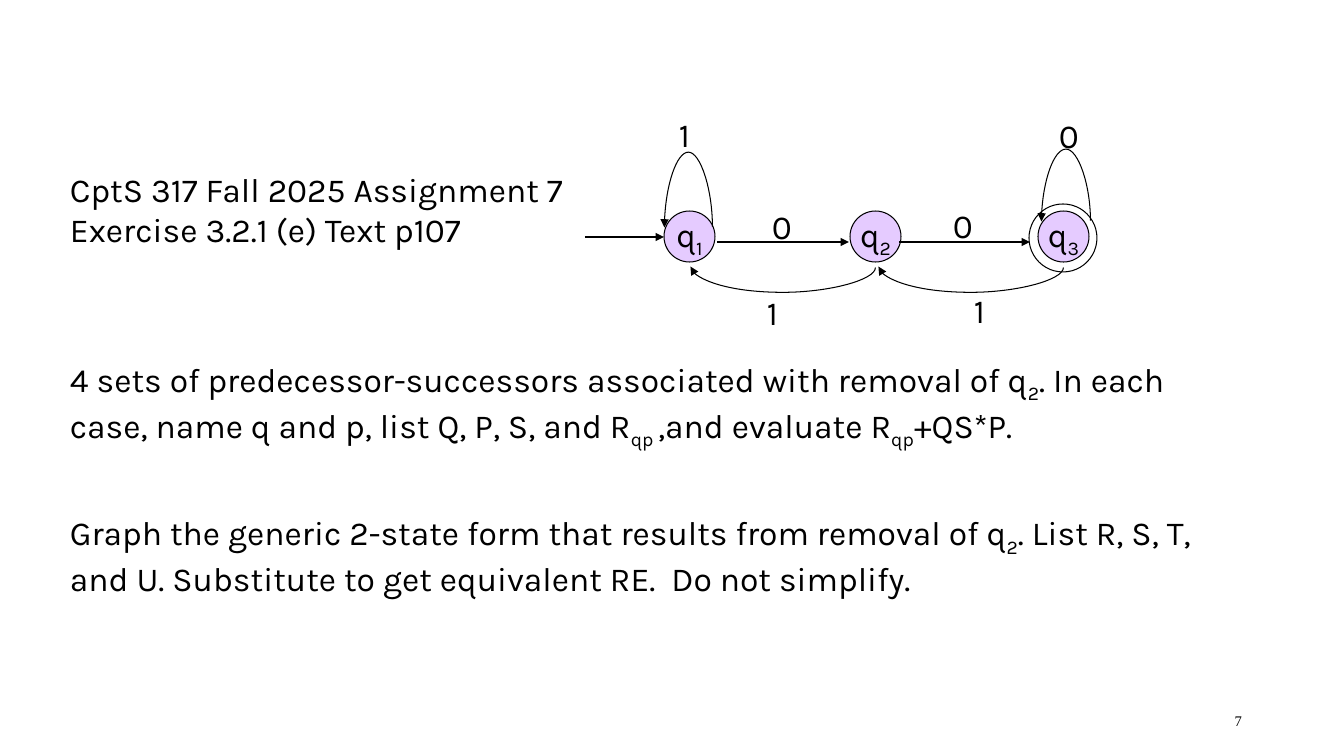
from lxml import etree
from pptx import Presentation
from pptx.dml.color import RGBColor
from pptx.enum.shapes import MSO_CONNECTOR, MSO_SHAPE
from pptx.enum.text import MSO_ANCHOR, MSO_AUTO_SIZE, PP_ALIGN
from pptx.oxml.ns import qn
from pptx.util import Emu, Pt

STRAIGHT, CURVE = MSO_CONNECTOR.STRAIGHT, MSO_CONNECTOR.CURVE
OVAL = MSO_SHAPE.OVAL
MIDDLE = MSO_ANCHOR.MIDDLE
GROW = MSO_AUTO_SIZE.SHAPE_TO_FIT_TEXT
LEFT, CENTER, RIGHT = PP_ALIGN.LEFT, PP_ALIGN.CENTER, PP_ALIGN.RIGHT
BLACK = RGBColor(0x00, 0x00, 0x00)
LILAC = RGBColor(0xCC, 0x99, 0xFF)

STATE_SIZE = 51
STATE_TOP = 211
STATE_LEFTS = [664, 850, 1038]
ARROWS = [(585, 664, 237), (717, 849, 242), (899, 1030, 242)]
BACK_ARCS = [(690, 875), (878, 1063)]
LOOPS = [(664, 712, 227, 75), (1041, 1090, 221, 72)]
LABELS = [("1", 669, 109), ("0", 1049, 110), ("1", 964, 285),
          ("1", 757, 287), ("0", 943, 200), ("0", 762, 201)]
INSTRUCTIONS = [
    (0, ["CptS 317 Fall 2025 Assignment 7"]),
    (0, ["Exercise 3.2.1 (e) Text p107"]),
    (78, ["4 sets of predecessor-successors associated with removal of q", "2",
          ". In each case, name q and p, list Q, P, S, and R", "qp ",
          ",and evaluate R", "qp", "+QS*P."]),
    (44, ["Graph the generic 2-state form that results from removal of q", "2",
          ". List R, S, T, and U. Substitute to get equivalent RE.  Do not simplify."]),
]


def px(length):
    return Emu(round(length * 914400 / 100.8))


def write(paragraph, pieces, size=24, font="Karla", align=LEFT):
    """Every second piece is a subscript."""
    paragraph.alignment = align
    for position, piece in enumerate(pieces):
        run = paragraph.add_run()
        run.text = piece
        run.font.size = Pt(size)
        run.font.name = font
        run.font.color.rgb = BLACK
        if position % 2:
            run._r.get_or_add_rPr().set("baseline", "-25000")


def add_text_frame(slide, left, top, width, height, wrap=True):
    frame = slide.shapes.add_textbox(px(left), px(top), px(width), px(height)).text_frame
    frame.word_wrap = wrap
    return frame


def add_instructions(slide):
    frame = add_text_frame(slide, 60, 164, 1191, 437)
    for position, (space, pieces) in enumerate(INSTRUCTIONS):
        paragraph = frame.add_paragraph() if position else frame.paragraphs[0]
        paragraph.space_before = Pt(space)
        write(paragraph, pieces)


def add_slide_number(slide):
    frame = add_text_frame(slide, 950, 701, 302, 40)
    frame.vertical_anchor = MIDDLE
    write(frame.paragraphs[0], ["7"], 10.5, "Times New Roman", RIGHT)


def add_label(slide, symbol, left, top):
    frame = add_text_frame(slide, left, top, 39, 50, wrap=False)
    frame.auto_size = GROW
    write(frame.paragraphs[0], [symbol])


def add_circle(slide, left, top, size):
    circle = slide.shapes.add_shape(OVAL, px(left), px(top), px(size), px(size))
    circle.shadow.inherit = False
    circle.fill.background()
    circle.line.color.rgb = BLACK
    circle.line.width = Pt(0.75)
    return circle


def add_state(slide, left, index):
    state = add_circle(slide, left, STATE_TOP, STATE_SIZE)
    state.fill.solid()
    state.fill.fore_color.rgb = LILAC
    tint = state._element.spPr.find(qn("a:solidFill"))[0]
    etree.SubElement(tint, qn("a:alpha"), val="50000")
    frame = state.text_frame
    frame.word_wrap = False
    frame.vertical_anchor = MIDDLE
    write(frame.paragraphs[0], ["q", index], align=CENTER)


def add_arrow(slide, kind, x1, y1, x2, y2):
    arrow = slide.shapes.add_connector(kind, px(x1), px(y1), px(x2), px(y2))
    arrow.line.color.rgb = BLACK
    arrow.line.width = Pt(0.75)
    etree.SubElement(arrow.line._get_or_add_ln(), qn("a:tailEnd"), type="triangle")
    etree.SubElement(arrow._element.spPr, qn("a:effectLst"))
    return arrow


def add_arc(slide, left, right, y, depth, upward=False):
    middle, half = (left + right) / 2, (right - left) / 2
    arc = add_arrow(slide, CURVE, middle, y - half, middle + 1, y + half)
    properties = arc._element.spPr
    frame = properties.find(qn("a:xfrm"))
    frame.set("rot", "16200000" if upward else "5400000")
    frame.set("flipH", "1")
    if upward:
        frame.set("flipV", "1")
    geometry = properties.find(qn("a:prstGeom"))
    adjustments = geometry.find(qn("a:avLst"))
    if adjustments is None:
        adjustments = etree.SubElement(geometry, qn("a:avLst"))
    etree.SubElement(adjustments, qn("a:gd"), name="adj1", fmla=f"val {-depth * 100000}")


def add_automaton(slide):
    for index, left in enumerate(STATE_LEFTS, start=1):
        add_state(slide, left, str(index))
    add_circle(slide, 1029, 204, 68)
    for start, end, y in ARROWS:
        add_arrow(slide, STRAIGHT, start, y, end, y)
    for left, right in BACK_ARCS:
        add_arc(slide, left, right, 267, 25)
    for left, right, y, depth in LOOPS:
        add_arc(slide, left, right, y, depth, upward=True)
    for symbol, left, top in LABELS:
        add_label(slide, symbol, left, top)


def main():
    prs = Presentation()
    prs.slide_width, prs.slide_height = px(1344), px(756)
    slide = prs.slides.add_slide(prs.slide_layouts[6])
    add_slide_number(slide)
    add_instructions(slide)
    add_automaton(slide)
    prs.save("out.pptx")


if __name__ == "__main__":
    main()
